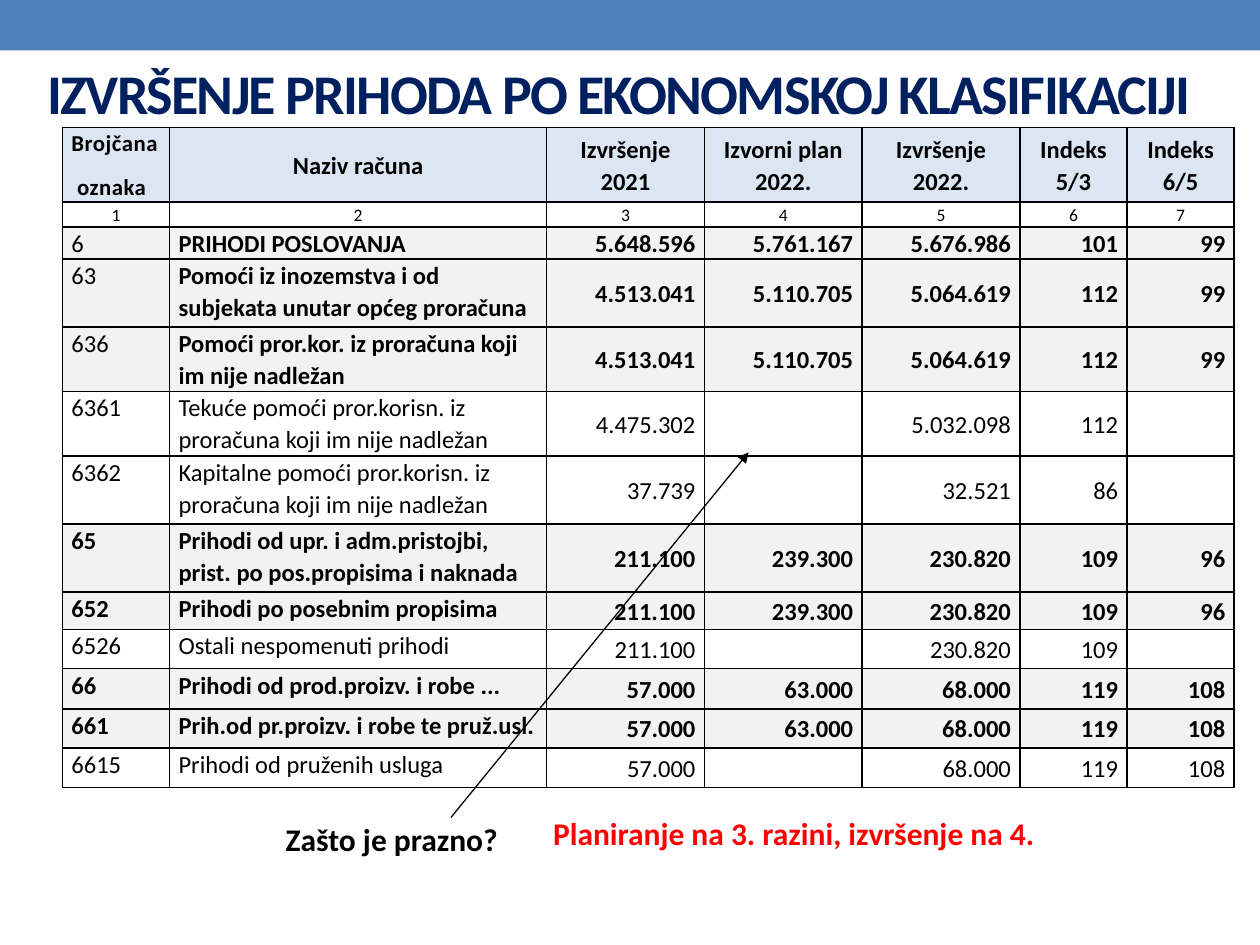
from dataclasses import dataclass

from lxml.etree import SubElement as Sub
from pptx import Presentation
from pptx.dml.color import RGBColor as Rgb
from pptx.enum.shapes import MSO_CONNECTOR as Link, MSO_SHAPE as Shape
from pptx.enum.text import MSO_ANCHOR as Anchor, PP_ALIGN as Align
from pptx.oxml.ns import qn
from pptx.util import Cm, Pt


@dataclass(frozen=True)
class Theme:
    font: str = "Calibri"
    band: str = "4F81BD"
    navy: str = "002060"
    black: str = "000000"
    red: str = "FF0000"
    head: str = "DCE6F2"
    gray: str = "F2F2F2"
    white: str = "FFFFFF"
    title: int = 32
    note: int = 18
    body: int = 14
    code: int = 13
    small: int = 10


T = Theme()

COLS = [2.16, 7.6, 3.18, 3.18, 3.18, 2.16, 2.16]
ROWS = [1.5, 0.51, 0.64, 1.37, 1.3, 1.3, 1.37, 1.37, 0.76, 0.79, 0.81, 0.79, 0.79]
HEADS = ["Brojčana\n oznaka", "Naziv računa", "Izvršenje 2021", "Izvorni plan 2022.",
         "Izvršenje 2022.", "Indeks 5/3", "Indeks 6/5"]
DATA = [
    ("6", "PRIHODI POSLOVANJA", "5.648.596", "5.761.167", "5.676.986", "101", "99"),
    ("63", "Pomoći iz inozemstva i od subjekata unutar općeg proračuna",
     "4.513.041", "5.110.705", "5.064.619", "112", "99"),
    ("636", "Pomoći pror.kor. iz proračuna koji im nije nadležan",
     "4.513.041", "5.110.705", "5.064.619", "112", "99"),
    ("6361", "Tekuće pomoći pror.korisn. iz proračuna koji im nije nadležan",
     "4.475.302", "", "5.032.098", "112", ""),
    ("6362", "Kapitalne pomoći pror.korisn. iz proračuna koji im nije nadležan",
     "37.739", "", "32.521", "86", ""),
    ("65", "Prihodi od upr. i adm.pristojbi, prist. po pos.propisima i naknada",
     "211.100", "239.300", "230.820", "109", "96"),
    ("652", "Prihodi po posebnim propisima", "211.100", "239.300", "230.820", "109", "96"),
    ("6526", "Ostali nespomenuti prihodi", "211.100", "", "230.820", "109", ""),
    ("66", "Prihodi od prod.proizv. i robe ...", "57.000", "63.000", "68.000", "119", "108"),
    ("661", "Prih.od pr.proizv. i robe te pruž.usl.",
     "57.000", "63.000", "68.000", "119", "108"),
    ("6615", "Prihodi od pruženih usluga", "57.000", "", "68.000", "119", "108"),
]


def style(run, size, color, bold, gap=0):
    font = run.font
    font.name, font.size, font.bold = T.font, Pt(size), bold
    font.color.rgb = Rgb.from_string(color)
    if gap:
        font._element.set("spc", str(round(gap * 100)))


def add_band(slide, width):
    band = slide.shapes.add_shape(Shape.RECTANGLE, 0, 0, width, Cm(1.02))
    band.shadow.inherit = False
    band.fill.solid()
    band.fill.fore_color.rgb = Rgb.from_string(T.band)
    band.line.fill.background()


def add_label(slide, text, place, size, color, gap=0):
    box = slide.shapes.add_textbox(*map(Cm, place))
    frame = box.text_frame
    frame.word_wrap = True
    frame.vertical_anchor = Anchor.MIDDLE
    frame.text = text
    style(frame.paragraphs[0].runs[0], size, color, True, gap)


def add_edges(cell):
    props = cell._tc.get_or_add_tcPr()
    for side in ("lnL", "lnR", "lnT", "lnB"):
        edge = Sub(props, qn(f"a:{side}"), w=str(Pt(1)))
        Sub(Sub(edge, qn("a:solidFill")), qn("a:srgbClr"), val=T.black)


def set_cell(cell, text, fill, size, bold, align, anchor=Anchor.MIDDLE, gap=0):
    add_edges(cell)
    cell.fill.solid()
    cell.fill.fore_color.rgb = Rgb.from_string(fill)
    cell.margin_left = cell.margin_right = Cm(0.18)
    cell.margin_top = cell.margin_bottom = 0
    cell.vertical_anchor = anchor
    if not text:
        return
    cell.text_frame.text = text
    for para in cell.text_frame.paragraphs:
        para.alignment = align
        para.line_spacing = 1.07
        para.space_after = Pt(8)
        for run in para.runs:
            style(run, size, T.black, bold, gap)


def add_grid(slide):
    frame = slide.shapes.add_table(len(ROWS), len(COLS), Cm(1.26), Cm(2.57),
                                   Cm(sum(COLS)), Cm(sum(ROWS)))
    grid = frame.table
    for col, width in zip(grid.columns, COLS):
        col.width = Cm(width)
    for row, height in zip(grid.rows, ROWS):
        row.height = Cm(height)

    # Heading and column numbers
    for i, head in enumerate(HEADS):
        first = i == 0
        set_cell(grid.cell(0, i), head, T.head, T.code if first else T.body, True,
                 Align.LEFT if first else Align.CENTER, gap=0.3 if first else 0)
        set_cell(grid.cell(1, i), str(i + 1), T.white, T.small, False, Align.CENTER)

    # Accounts: codes shorter than four digits are shaded subtotals
    for r, row in enumerate(DATA, 2):
        code = row[0]
        total = len(code) < 4
        for i, text in enumerate(row):
            bold = total and (i > 0 or code >= "65")
            top = i < 2 and code != "6"
            set_cell(grid.cell(r, i), text, T.gray if total else T.white, T.body, bold,
                     Align.LEFT if i < 2 else Align.RIGHT,
                     Anchor.TOP if top else Anchor.MIDDLE)


def add_arrow(slide, start, end):
    arrow = slide.shapes.add_connector(Link.STRAIGHT, *map(Cm, start + end))
    arrow.line.color.rgb = Rgb.from_string(T.black)
    arrow.line.width = Pt(0.75)
    Sub(arrow.line._get_or_add_ln(), qn("a:tailEnd"), type="triangle")
    Sub(arrow._element.spPr, qn("a:effectLst"))


def main():
    deck = Presentation()
    deck.slide_width, deck.slide_height = Cm(25.4), Cm(19.05)
    slide = deck.slides.add_slide(deck.slide_layouts[6])

    # Band and title
    add_band(slide, deck.slide_width)
    add_label(slide, "IZVRŠENJE PRIHODA PO EKONOMSKOJ KLASIFIKACIJI",
              (0.71, 1.14, 24.2, 1.45), T.title, T.navy, -1)

    # Table
    add_grid(slide)

    # Notes on the empty cells
    add_label(slide, "Zašto je prazno?", (5.51, 16.41, 5, 1.02), T.note, T.black)
    add_arrow(slide, (9.09, 16.48), (15.09, 9.12))
    add_label(slide, "Planiranje na 3. razini, izvršenje na 4.",
              (10.9, 16.28, 12.7, 1.02), T.note, T.red)

    deck.save("out.pptx")


if __name__ == "__main__":
    main()
